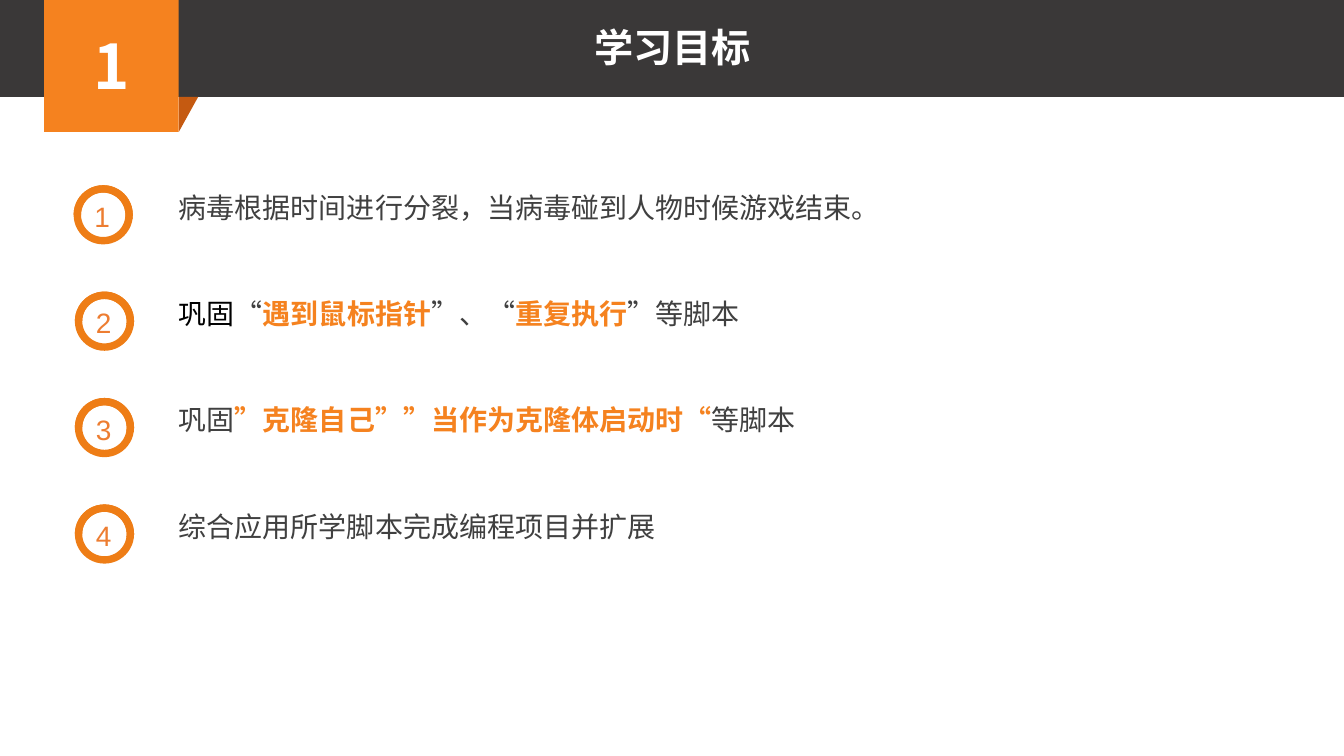
from pptx import Presentation
from pptx.dml.color import RGBColor
from pptx.enum import lang, shapes, text
from pptx.oxml import ns, xmlchemy
from pptx.util import Pt

DARK = RGBColor(0x3A, 0x38, 0x38)
ORANGE = RGBColor(0xF5, 0x82, 0x1F)
RUST = RGBColor(0xC5, 0x5A, 0x11)
RING = RGBColor(0xEE, 0x7D, 0x16)
DIGIT = RGBColor(0xED, 0x7D, 0x31)
GREY = RGBColor(0x40, 0x40, 0x40)
BLACK = RGBColor(0, 0, 0)
WHITE = RGBColor(255, 255, 255)
HAN = "Noto Sans CJK SC"
KIND = shapes.MSO_SHAPE
CENTER = text.PP_ALIGN.CENTER
TOP, STEP = 132.3, 76

GOALS = [
    [("病毒根据时间进行分裂，当病毒碰到人物时候游戏结束。", GREY, False)],
    [("巩固", BLACK, False), ("“", GREY, False),
     ("遇到鼠标指针", ORANGE, True), ("”、“", GREY, False),
     ("重复执行", ORANGE, True), ("”等脚本", GREY, False)],
    [("巩固", GREY, False),
     ("”克隆自己””当作为克隆体启动时“", ORANGE, True),
     ("等脚本", GREY, False)],
    [("综合应用所学脚本完成编程项目并扩展", GREY, False)],
]


def add_form(parent, kind, box, color, adjust=()):
    form = parent.add_shape(kind, *map(Pt, box))
    form.shadow.inherit = False
    form.fill.solid()
    form.fill.fore_color.rgb = color
    form.line.fill.background()
    for index, value in enumerate(adjust):
        form.adjustments[index] = value
    return form


def write(frame, parts, size, face="Arial", align=None):
    line = frame.paragraphs[0]
    line.alignment = align
    for words, color, bold in parts:
        run = line.add_run()
        run.text = words
        font = run.font
        font.size = Pt(size)
        font.name = face
        font.bold = bold
        font.color.rgb = color
        font.language_id = lang.MSO_LANGUAGE_ID.SIMPLIFIED_CHINESE
        east = xmlchemy.OxmlElement("a:ea")
        east.set("typeface", HAN)
        run._r.rPr.find(ns.qn("a:latin")).addnext(east)


def add_text(parent, box, parts, size, face="Arial", align=None, wrap=True):
    label = parent.add_textbox(*map(Pt, box))
    label.text_frame.word_wrap = wrap
    label.text_frame.auto_size = text.MSO_AUTO_SIZE.SHAPE_TO_FIT_TEXT
    write(label.text_frame, parts, size, face, align)


def add_head(parent):
    add_form(parent, KIND.RECTANGLE, (0, -2, 960, 71.3), DARK)
    badge = add_form(parent, KIND.RECTANGLE, (31.5, -2, 96.2, 96.2), ORANGE)
    badge.text_frame.vertical_anchor = text.MSO_ANCHOR.MIDDLE
    write(badge.text_frame, [("1", WHITE, True)], 44, HAN, CENTER)
    fold = add_form(parent, KIND.RIGHT_TRIANGLE, (127.7, 69.3, 13.8, 25), RUST)
    fold._element.spPr.xfrm.set("flipV", "1")
    add_text(parent, (322.5, 13, 315.4, 41), [("学习目标", WHITE, True)],
             28, HAN, CENTER)


def add_ring(parent, left, top, digit):
    group = parent.add_group_shape().shapes
    box = (left, top, 42.3, 42.3)
    add_form(group, KIND.DONUT, box, RING, [0.125])
    add_form(group, KIND.BLOCK_ARC, box, RING, [107.95, 5.13, 0.125])
    add_text(group, (left + 7.8, top + 6.5, 25.7, 31.5),
             [(digit, DIGIT, False)], 20, wrap=False)


def main():
    deck = Presentation()
    deck.slide_width, deck.slide_height = Pt(960), Pt(540)
    parent = deck.slides.add_slide(deck.slide_layouts[6]).shapes
    add_head(parent)
    for index, parts in enumerate(GOALS):
        top = TOP + index * STEP
        add_ring(parent, 53.5 if index else 52.6, top, str(index + 1))
        add_text(parent, (120.6, top, 695 if index else 668, 31.5), parts, 20)
    deck.save("out.pptx")


if __name__ == "__main__":
    main()
